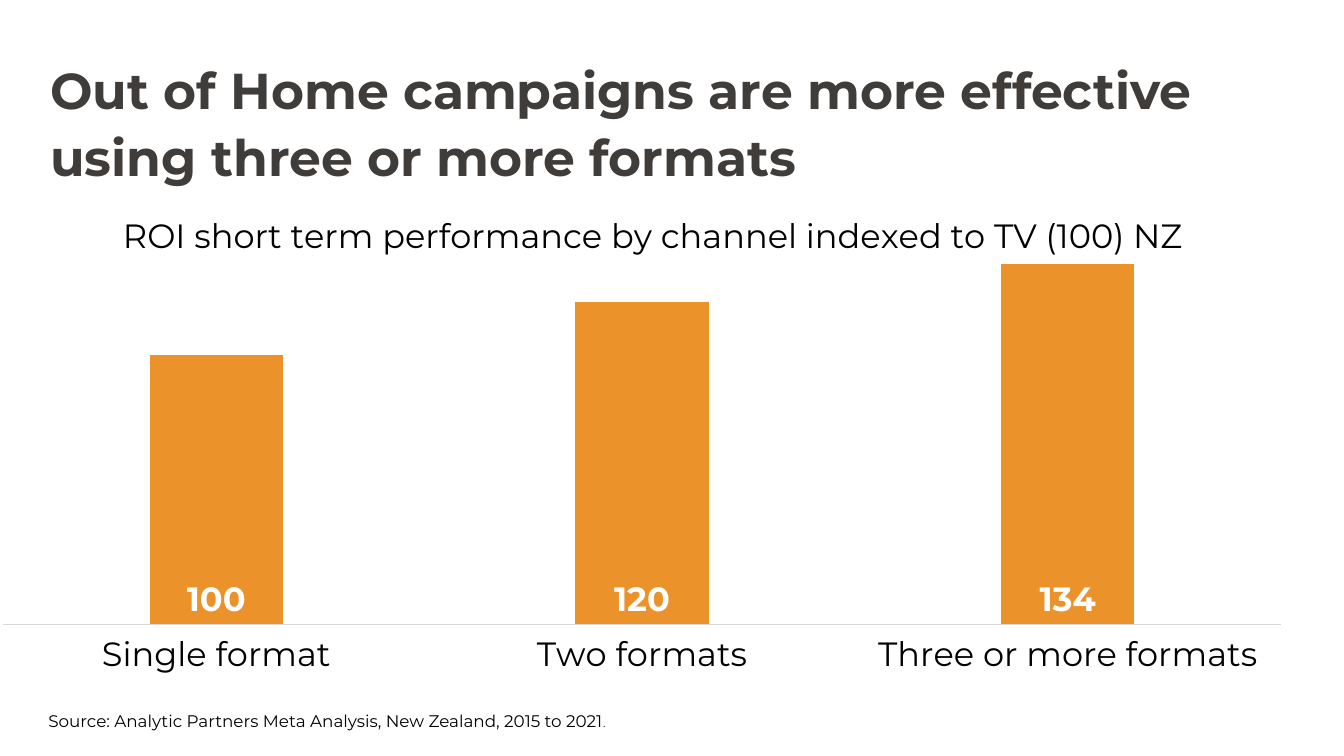
from pptx import Presentation
from pptx.chart.data import CategoryChartData
from pptx.dml.color import RGBColor
from pptx.enum.chart import XL_CHART_TYPE, XL_LABEL_POSITION, XL_TICK_LABEL_POSITION, XL_TICK_MARK
from pptx.oxml import parse_xml
from pptx.oxml.ns import nsdecls
from pptx.util import Cm, Pt

COLORS = {"heading": "403C39", "text": "000000", "bar": "EB922A", "label": "FFFFFF", "axis": "D9D9D9"}


def style_font(font, size, color, bold=False):
    for name, value in {"name": "Montserrat", "size": Pt(size), "bold": bold}.items():
        setattr(font, name, value)
    font.color.rgb = RGBColor.from_string(COLORS[color])


def make_layout(**values):
    items = "".join(f'<c:{name} val="{value}"/>' for name, value in values.items())
    return parse_xml(f'<c:layout {nsdecls("c")}><c:manualLayout>{items}</c:manualLayout></c:layout>')


deck = Presentation()
deck.slide_width, deck.slide_height = Cm(33.87), Cm(19.05)
page = deck.slides.add_slide(deck.slide_layouts[6])

# Column chart
data = CategoryChartData()
data.categories = ["Single format", "Two formats", "Three or more formats"]
data.add_series("Series 1", [100, 120, 134])
chart = page.shapes.add_chart(
    XL_CHART_TYPE.COLUMN_CLUSTERED, Cm(-1.14), Cm(4.78), Cm(34.06), Cm(13.31), data).chart
chart.has_legend = False
style_font(chart.font, 10, "text")

# Chart title
chart.has_title = True
span = chart.chart_title.text_frame.paragraphs[0].add_run()
span.text = "ROI short term performance by channel indexed to TV (100) NZ"
style_font(span.font, 24, "text")
title_element = chart.chart_title._element
for old_layout in title_element.findall("{*}layout"):
    title_element.remove(old_layout)
title_element.find("{*}tx").addnext(make_layout(xMode="edge", yMode="edge", x=0.12, y=0.03))

# Plot area
plot_area = chart._chartSpace.chart.plotArea
for old_layout in plot_area.findall("{*}layout"):
    plot_area.remove(old_layout)
plot_area.insert(0, make_layout(
    layoutTarget="inner", xMode="edge", yMode="edge", x=0.036, y=0.11, w=0.945, h=0.713))

# Axes
value_axis = chart.value_axis
axis_format = {"minimum_scale": 0, "maximum_scale": 140, "major_unit": 50,
               "has_major_gridlines": False, "visible": False}
for name, value in axis_format.items():
    setattr(value_axis, name, value)
category_axis = chart.category_axis
category_axis.major_tick_mark = XL_TICK_MARK.NONE
category_axis.tick_label_position = XL_TICK_LABEL_POSITION.LOW
category_axis.format.line.width = Pt(0.75)
category_axis.format.line.color.rgb = RGBColor.from_string(COLORS["axis"])
style_font(category_axis.tick_labels.font, 24, "text")

# Bars and their values
plot = chart.plots[0]
for name, value in {"gap_width": 219, "overlap": -46, "vary_by_categories": False}.items():
    setattr(plot, name, value)
bars = plot.series[0]
bars.format.fill.solid()
bars.format.fill.fore_color.rgb = RGBColor.from_string(COLORS["bar"])
labels = bars.data_labels
labels.show_value = True
labels.position = XL_LABEL_POSITION.INSIDE_BASE
style_font(labels.font, 24, "label", bold=True)

# Heading and source: place, inset, line spacing, then runs of text, size, color and bold
texts = [
    ((1.27, 1.35, 28.96, 1.52), (0, 0), 1.1,
     [("Out of Home campaigns are more effective using three or more formats", 36, "heading", True)]),
    ((0.97, 17.78, 32.31, 1.12), (0.25, 0.13), 1.0,
     [("Source: Analytic Partners Meta Analysis, New Zealand, 2015 to 2021", 12, "text", False),
      (".", 8, "text", False)]),
]
for place, (side, edge), spacing, spans in texts:
    frame = page.shapes.add_textbox(*map(Cm, place)).text_frame
    frame_format = {"word_wrap": True, "margin_left": Cm(side), "margin_right": Cm(side),
                    "margin_top": Cm(edge), "margin_bottom": Cm(edge)}
    for name, value in frame_format.items():
        setattr(frame, name, value)
    para = frame.paragraphs[0]
    para.line_spacing = spacing
    for text, size, color, bold in spans:
        span = para.add_run()
        span.text = text
        style_font(span.font, size, color, bold)

deck.save("out.pptx")
